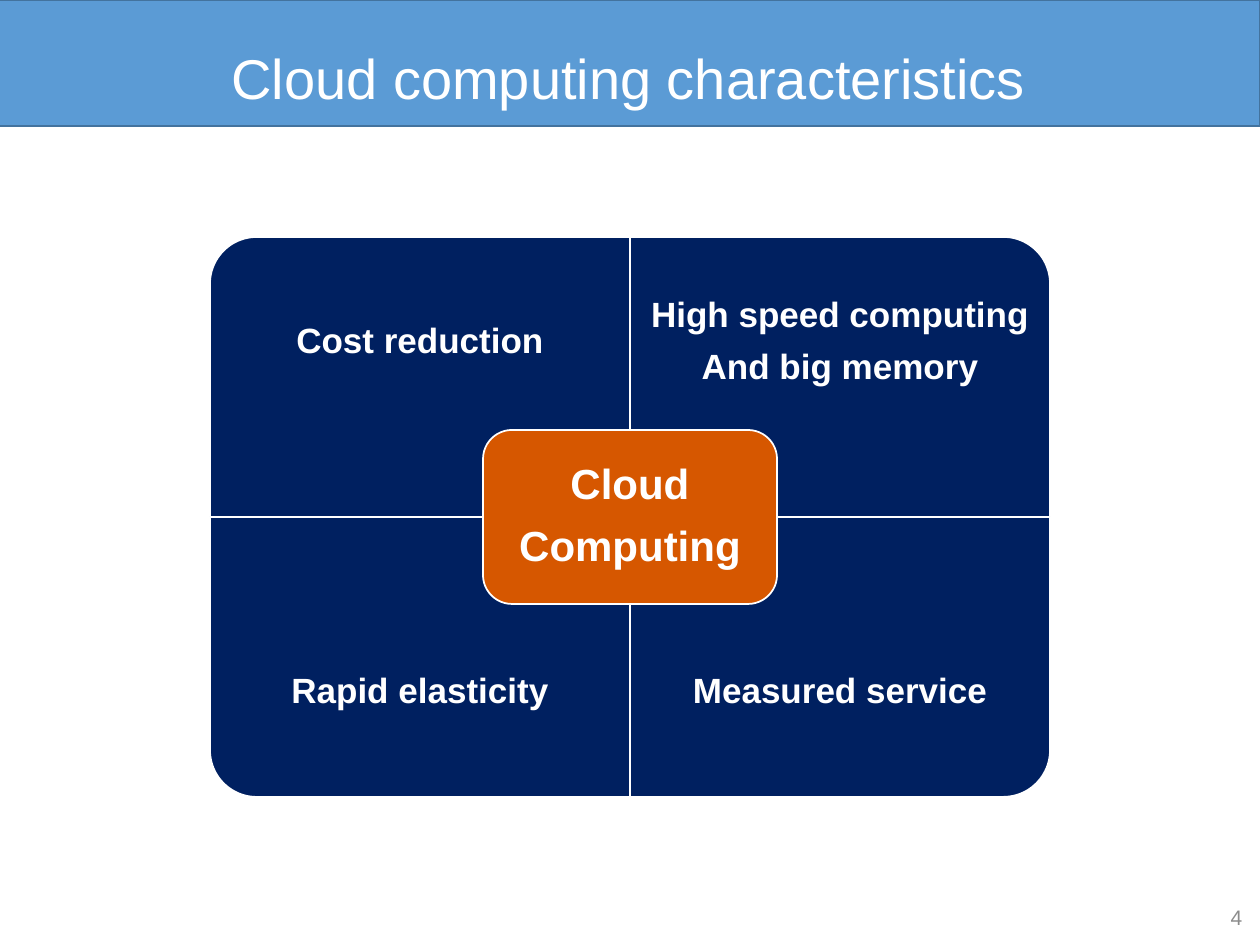
from pptx import Presentation
from pptx.dml.color import RGBColor
from pptx.enum.shapes import MSO_SHAPE as Shape
from pptx.enum.text import MSO_ANCHOR as Anchor, PP_ALIGN as Align
from pptx.util import Pt

WHITE, NAVY, ORANGE = "FFFFFF", "002060", "D65700"
BLUE, BLUE_EDGE, GREY = "5B9BD5", "43739E", "8C8C8C"


def color(hex_string):
    return RGBColor.from_string(hex_string)


def write(frame, text, size=20, ink=WHITE, bold=False, align=Align.CENTER,
          spacing=1.0, after=0, inset=(7.2, 3.6), font="Arial"):
    """Fill a text frame, one paragraph per line of text."""
    frame.word_wrap = True
    frame.vertical_anchor = Anchor.MIDDLE
    frame.margin_left = frame.margin_right = Pt(inset[0])
    frame.margin_top = frame.margin_bottom = Pt(inset[1])
    frame.text = text
    for paragraph in frame.paragraphs:
        paragraph.alignment = align
        paragraph.line_spacing = spacing
        paragraph.space_after = Pt(after)
        paragraph.font.name = font
        paragraph.font.size = Pt(size)
        paragraph.font.bold = bold
        paragraph.font.color.rgb = color(ink)


class Canvas:
    def __init__(self, slide, line_width=1):
        self.slide = slide
        self.line_width = line_width

    def box(self, kind, left, top, width, height, fill, line=WHITE, rotation=0):
        shape = self.slide.shapes.add_shape(
            kind, Pt(left), Pt(top), Pt(width), Pt(height))
        shape.shadow.inherit = False
        shape.fill.solid()
        shape.fill.fore_color.rgb = color(fill)
        shape.line.color.rgb = color(line)
        shape.line.width = Pt(self.line_width)
        shape.rotation = rotation

    def text(self, left, top, width, height, text, **style):
        shape = self.slide.shapes.add_textbox(
            Pt(left), Pt(top), Pt(width), Pt(height))
        write(shape.text_frame, text, **style)

    def quadrant(self, center_x, center_y, width, height, rotation):
        """Place a one-round-corner box so that it covers width x height once turned."""
        if rotation % 180:
            width, height = height, width
        self.box(Shape.ROUND_1_RECTANGLE, center_x - width / 2,
                 center_y - height / 2, width, height, NAVY, rotation=rotation)


def main():
    presentation = Presentation()
    presentation.slide_width, presentation.slide_height = Pt(720), Pt(540)
    canvas = Canvas(presentation.slides.add_slide(presentation.slide_layouts[6]))

    # Title band
    canvas.box(Shape.RECTANGLE, -1.5, 0, 721.5, 72, BLUE, BLUE_EDGE)
    canvas.text(-1.5, 1.5, 721.5, 72, "Cloud computing characteristics",
                size=32, spacing=1.35)

    # Slide number
    canvas.text(665, 511, 52, 26, "4", size=12, ink=GREY, align=Align.RIGHT)

    # Four quadrants around the middle point
    middle_x, middle_y, width, height, label_height = 360, 295.4, 240, 160, 120
    quadrants = [
        ("Cost reduction", -1, -1, 270),
        ("High speed computing\nAnd big memory", 1, -1, 0),
        ("Rapid elasticity", -1, 1, 180),
        ("Measured service", 1, 1, 90),
    ]
    for label, side_x, side_y, rotation in quadrants:
        center_x = middle_x + side_x * width / 2
        canvas.quadrant(center_x, middle_y + side_y * height / 2,
                        width, height, rotation)
        # Labels keep to the outer three quarters of each quadrant
        label_y = middle_y + side_y * (height - label_height / 2)
        canvas.text(center_x - width / 2, label_y - label_height / 2,
                    width, label_height, label, bold=True,
                    spacing=0.9, after=8, inset=(11, 11))

    # Central topic
    core_width, core_height, gap = 168, 99.4, 5
    left, top = middle_x - core_width / 2, middle_y - core_height / 2
    canvas.box(Shape.ROUNDED_RECTANGLE, left, top, core_width, core_height, ORANGE)
    canvas.text(left + gap, top + gap, core_width - 2 * gap, core_height - 2 * gap,
                "Cloud\nComputing", size=24, bold=True,
                spacing=0.9, after=9.5, inset=(7.2, 7.2))

    presentation.save("out.pptx")


if __name__ == "__main__":
    main()
